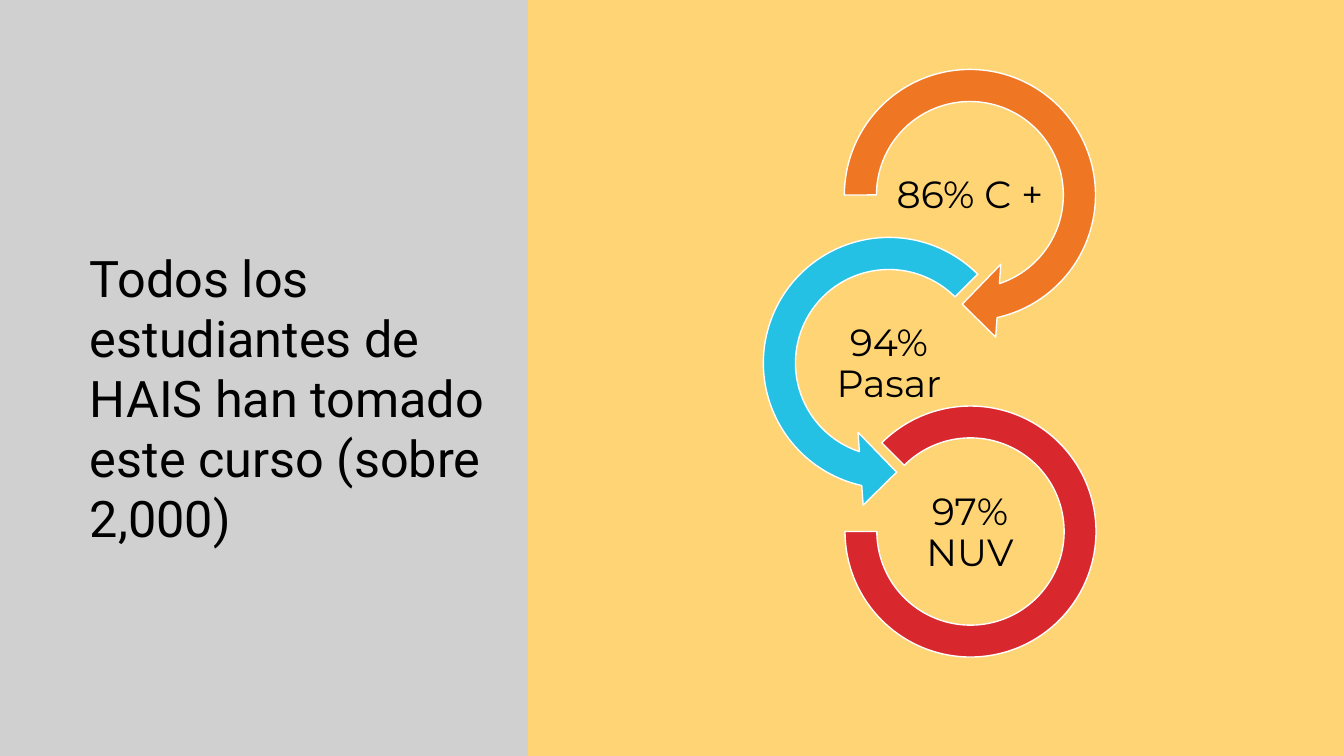
from pptx import Presentation
from pptx.dml.color import RGBColor
from pptx.enum.shapes import MSO_SHAPE as SHAPE
from pptx.enum.text import MSO_ANCHOR as ANCHOR, PP_ALIGN as ALIGN
from pptx.util import Emu, Pt

SLIDE_W, SLIDE_H = 1344, 756
EMU_PER_PX = 12192000 / SLIDE_W
COLORS = {
    "background": "FFD475",
    "panel": "D0D0D1",
    "orange": "EF7622",
    "blue": "24C1E4",
    "red": "D9272E",
    "white": "FFFFFF",
    "black": "000000",
}
RINGS = [
    ("86% C +", SHAPE.CIRCULAR_ARROW, 81, 292, "orange", (0.11, 11.42, 45, 108, 0.125)),
    ("94% Pasar", SHAPE.LEFT_CIRCULAR_ARROW, 0, 292, "blue", (0.11, 11.42, 63, 189, 0.125)),
    ("97% NUV", SHAPE.BLOCK_ARC, 81, 251, "red", (135, 108, 0.127)),
]


def px(length):
    return Emu(round(length * EMU_PER_PX))


def color(name):
    return RGBColor.from_string(COLORS[name])


def add_figure(slide, kind, box, fill, line, adjustments=()):
    figure = slide.shapes.add_shape(kind, *map(px, box))
    figure.shadow.inherit = False
    for index, value in enumerate(adjustments):
        figure.adjustments[index] = value
    figure.fill.solid()
    figure.fill.fore_color.rgb = color(fill)
    figure.line.color.rgb = color(line)
    figure.line.width = Pt(1)


def add_text(slide, words, box, *, font, size, spacing, after,
             align=ALIGN.LEFT, anchor=ANCHOR.TOP, inset=(10, 5)):
    frame = slide.shapes.add_textbox(*map(px, box)).text_frame
    frame.word_wrap = True
    frame.vertical_anchor = anchor
    frame.margin_left = frame.margin_right = px(inset[0])
    frame.margin_top = frame.margin_bottom = px(inset[1])
    paragraph = frame.paragraphs[0]
    paragraph.alignment = align
    paragraph.line_spacing = spacing
    paragraph.space_after = Pt(after)
    run = paragraph.add_run()
    run.text = words
    run.font.name = font
    run.font.size = Pt(size)
    run.font.color.rgb = color("black")


def add_ring_chain(slide, left, top):
    ring_step, label_step = 168, 169
    label_w, label_h = 162, 82
    for index, (label, kind, shift, size, fill, adjustments) in enumerate(RINGS):
        center_x = left + 146 + shift
        ring_y = top + 146 + index * ring_step
        label_y = top + 147 + index * label_step
        add_figure(slide, kind, (center_x - size // 2, ring_y - size // 2, size, size),
                   fill, "white", adjustments)
        add_text(slide, label,
                 (center_x - label_w // 2, label_y - label_h // 2, label_w, label_h),
                 font="Montserrat", size=27, spacing=0.9, after=9,
                 align=ALIGN.CENTER, anchor=ANCHOR.MIDDLE, inset=(2, 2))


def add_statement_panel(slide, left, top, width, height):
    add_figure(slide, SHAPE.RECTANGLE, (left, top, width, height), "panel", "panel")
    add_text(slide, "Todos los estudiantes de HAIS han tomado este curso (sobre 2,000)",
             (left + 80, top + 242, width - 80, 323),
             font="Roboto", size=36, spacing=Pt(43), after=6)


def main():
    deck = Presentation()
    deck.slide_width, deck.slide_height = px(SLIDE_W), px(SLIDE_H)
    slide = deck.slides.add_slide(deck.slide_layouts[6])
    slide.background.fill.solid()
    slide.background.fill.fore_color.rgb = color("background")
    add_ring_chain(slide, 743, 49)
    add_statement_panel(slide, 0, 0, 527, SLIDE_H)
    deck.save("out.pptx")


if __name__ == "__main__":
    main()
